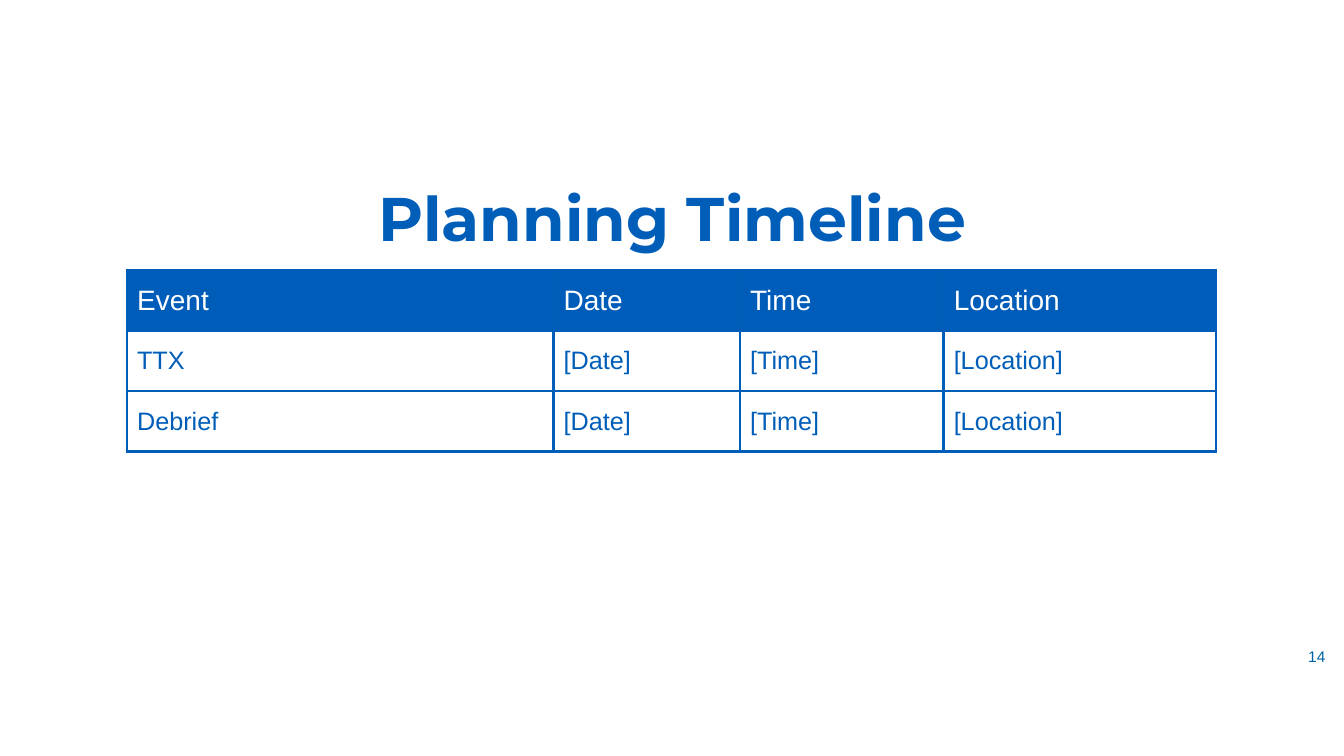
from dataclasses import dataclass
from typing import Any

import lxml.etree
import pptx
import pptx.dml.color
import pptx.enum.text
import pptx.oxml.ns
import pptx.util

Inches = pptx.util.Inches
Pt = pptx.util.Pt
RGBColor = pptx.dml.color.RGBColor
MIDDLE = pptx.enum.text.MSO_ANCHOR.MIDDLE
CENTER = pptx.enum.text.PP_ALIGN.CENTER
qn = pptx.oxml.ns.qn


@dataclass(frozen=True)
class Theme:
    blue: str = "005EB8"
    header_blue: str = "005CB9"
    number_blue: str = "0063A6"
    white: str = "FFFFFF"
    heading_font: str = "Montserrat"
    body_font: str = "Arial"
    title_size: float = 44
    header_size: float = 20
    body_size: float = 18
    number_size: float = 11
    border_width: float = 2.25


@dataclass(frozen=True)
class TextStyle:
    font: str
    size: float
    color: str
    bold: bool = False


@dataclass(frozen=True)
class RowStyle:
    text: TextStyle
    fill: str


@dataclass(frozen=True)
class Column:
    heading: str
    width: float


THEME = Theme()
TITLE = TextStyle(THEME.heading_font, THEME.title_size, THEME.blue, True)
NUMBER = TextStyle(THEME.body_font, THEME.number_size, THEME.number_blue)
HEADER_ROW = RowStyle(
    TextStyle(THEME.body_font, THEME.header_size, THEME.white), THEME.header_blue
)
EVENT_ROW = RowStyle(
    TextStyle(THEME.body_font, THEME.body_size, THEME.blue), THEME.white
)

COLUMNS = [
    Column("Event", 4.23),
    Column("Date", 1.85),
    Column("Time", 2.02),
    Column("Location", 2.7),
]
EVENTS = ["TTX", "Debrief"]
ROW_HEIGHT = 0.6


def apply_format(target: Any, values: dict[str, Any]) -> None:
    for name, value in values.items():
        setattr(target, name, value)


def write_text(frame: Any, text: str, style: TextStyle, **layout: Any) -> None:
    paragraph = frame.paragraphs[0]
    apply_format(paragraph, layout)
    run = paragraph.add_run()
    run.text = text
    apply_format(
        run.font,
        {"name": style.font, "size": Pt(style.size), "bold": style.bold},
    )
    run.font.color.rgb = RGBColor.from_string(style.color)


def add_borders(cell: Any) -> None:
    properties = cell._tc.get_or_add_tcPr()
    for side in ("lnL", "lnR", "lnT", "lnB"):
        line = lxml.etree.SubElement(
            properties, qn(f"a:{side}"), w=str(int(Pt(THEME.border_width)))
        )
        fill = lxml.etree.SubElement(line, qn("a:solidFill"))
        lxml.etree.SubElement(fill, qn("a:srgbClr"), val=THEME.blue)


def fill_row(cells: Any, texts: list[str], style: RowStyle) -> None:
    for cell, text in zip(cells, texts):
        add_borders(cell)
        cell.fill.solid()
        cell.fill.fore_color.rgb = RGBColor.from_string(style.fill)
        cell.vertical_anchor = MIDDLE
        write_text(cell.text_frame, text, style.text)


def add_page_number(slide: Any, number: str) -> None:
    box = slide.shapes.add_textbox(
        Inches(12.79), Inches(6.31), Inches(0.54), Inches(0.41)
    )
    apply_format(box.text_frame, {"word_wrap": True, "vertical_anchor": MIDDLE})
    write_text(box.text_frame, number, NUMBER, alignment=CENTER)


def add_timeline(slide: Any) -> None:
    rows = [[column.heading for column in COLUMNS]] + [
        [event] + [f"[{column.heading}]" for column in COLUMNS[1:]]
        for event in EVENTS
    ]
    timeline = slide.shapes.add_table(
        len(rows),
        len(COLUMNS),
        Inches(1.26),
        Inches(2.68),
        Inches(sum(column.width for column in COLUMNS)),
        Inches(ROW_HEIGHT * len(rows)),
    ).table
    timeline.horz_banding = False
    for table_column, column in zip(timeline.columns, COLUMNS):
        table_column.width = Inches(column.width)
    for index, (table_row, texts) in enumerate(zip(timeline.rows, rows)):
        table_row.height = Inches(ROW_HEIGHT)
        fill_row(table_row.cells, texts, EVENT_ROW if index else HEADER_ROW)


def add_title(slide: Any, text: str) -> None:
    title = slide.shapes.title
    apply_format(
        title,
        {
            "left": Inches(0.92),
            "top": Inches(1.76),
            "width": Inches(11.5),
            "height": Inches(0.88),
        },
    )
    apply_format(title.text_frame, {"word_wrap": True, "vertical_anchor": MIDDLE})
    write_text(title.text_frame, text, TITLE, alignment=CENTER, line_spacing=0.9)


def main() -> None:
    presentation = pptx.Presentation()
    apply_format(
        presentation,
        {"slide_width": Inches(13.33), "slide_height": Inches(7.5)},
    )
    slide = presentation.slides.add_slide(presentation.slide_layouts[5])
    add_page_number(slide, "14")
    add_timeline(slide)
    add_title(slide, "Planning Timeline")
    presentation.save("out.pptx")


if __name__ == "__main__":
    main()
